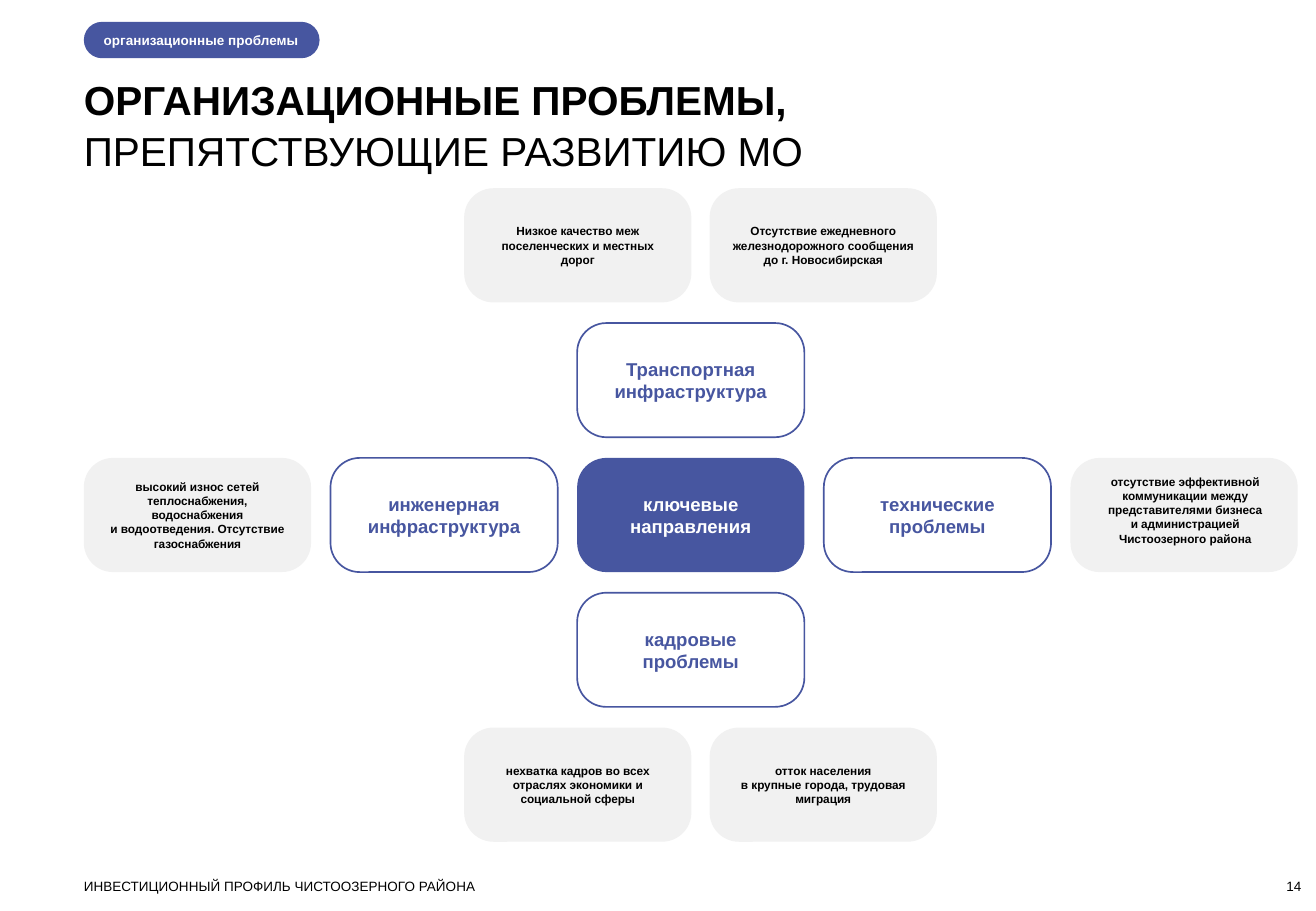
from pptx import Presentation
from pptx.dml.color import RGBColor
from pptx.enum.shapes import MSO_SHAPE
from pptx.enum.text import MSO_ANCHOR, MSO_AUTO_SIZE, PP_ALIGN
from pptx.util import Pt

ROUNDED = MSO_SHAPE.ROUNDED_RECTANGLE
TOP, MIDDLE, BOTTOM = MSO_ANCHOR.TOP, MSO_ANCHOR.MIDDLE, MSO_ANCHOR.BOTTOM
LEFT, CENTER, RIGHT = PP_ALIGN.LEFT, PP_ALIGN.CENTER, PP_ALIGN.RIGHT
NO_FIT = MSO_AUTO_SIZE.NONE
TITLE_ONLY = 5
EMU_PER_PX = 9144
FONT = "Arial"
COLORS = {"blue": "4756A0", "gray": "F1F1F1", "white": "FFFFFF", "black": "000000"}
CARD_W, CARD_H = 187, 94
STEP_X, STEP_Y = 203, 111
CENTER_X, CENTER_Y = 475, 377
CARD_STYLES = {
    "hub": ("blue", None, "white", 11),
    "area": (None, "blue", "blue", 11),
    "note": ("gray", None, "black", 7),
}
SIDE_SHIFT = CARD_W / 2 / STEP_X
PAIR_LEFT, PAIR_RIGHT = -SIDE_SHIFT, 1 - SIDE_SHIFT

CARDS = [
    ("hub", 0, 0, "ключевые направления"),
    ("area", 0, -1, "Транспортная инфраструктура"),
    ("area", -1, 0, "инженерная инфраструктура"),
    ("area", 1, 0, "технические проблемы"),
    ("area", 0, 1, "кадровые проблемы"),
    ("note", PAIR_LEFT, -2, "Низкое качество меж поселенческих и местных дорог"),
    ("note", PAIR_RIGHT, -2,
     "Отсутствие ежедневного железнодорожного сообщения до г. Новосибирская"),
    ("note", -2, 0, "высокий износ сетей теплоснабжения, водоснабжения\n"
     "и водоотведения. Отсутствие газоснабжения"),
    ("note", PAIR_LEFT, 2,
     "нехватка кадров во всех отраслях экономики и социальной сферы"),
    ("note", PAIR_RIGHT, 2, "отток населения\nв крупные города, трудовая миграция"),
]
BUSINESS_NOTE = ("отсутствие эффективной\nкоммуникации между представителями бизнеса\v"
                 "и администрацией Чистоозерного района")


def px(n):
    return round(n) * EMU_PER_PX


class Deck:
    """Holds the slide style and draws each kind of element on the current slide."""

    def __init__(self, width, height):
        self.prs = Presentation()
        self.prs.slide_width, self.prs.slide_height = px(width), px(height)
        self.s = self.prs.slides.add_slide(self.prs.slide_layouts[TITLE_ONLY])

    def color(self, name):
        return RGBColor.from_string(COLORS[name])

    def set_text(self, tf, text, size, color, bold=False, align=LEFT, anchor=TOP,
                 insets=(0, 0, 0, 0)):
        tf.text = text
        tf.word_wrap = True
        tf.auto_size = NO_FIT
        tf.vertical_anchor = anchor
        tf.margin_left, tf.margin_top, tf.margin_right, tf.margin_bottom = map(px, insets)
        for p in tf.paragraphs:
            p.alignment = align
            p.font.name = FONT
            p.font.size = Pt(size)
            p.font.bold = bold
            p.font.color.rgb = self.color(color)

    def title(self, x, y, w, h, text):
        sp = self.s.shapes.title
        sp.left, sp.top, sp.width, sp.height = map(px, (x, y, w, h))
        self.set_text(sp.text_frame, text, 24, "black")
        for p in sp.text_frame.paragraphs:
            p.line_spacing = 1.05
        sp.text_frame.paragraphs[0].font.bold = True

    def text(self, x, y, w, h, text, **style):
        sp = self.s.shapes.add_textbox(*map(px, (x, y, w, h)))
        self.set_text(sp.text_frame, text, 8, "black", **style)

    def box(self, x, y, w, h, radius, fill, line):
        sp = self.s.shapes.add_shape(ROUNDED, *map(px, (x, y, w, h)))
        sp.adjustments[0] = radius
        sp.shadow.inherit = False
        if fill:
            sp.fill.solid()
            sp.fill.fore_color.rgb = self.color(fill)
        else:
            sp.fill.background()
        if line:
            sp.line.color.rgb = self.color(line)
            sp.line.width = Pt(1)
        else:
            sp.line.fill.background()
        return sp.text_frame

    def tag(self, x, y, w, h, text):
        tf = self.box(x, y, w, h, 0.5, "blue", None)
        self.set_text(tf, text, 8, "white", True, LEFT, MIDDLE, (12, 0, 0, 0))

    def card(self, kind, col, row, text, insets=(10, 5, 10, 5)):
        fill, line, color, size = CARD_STYLES[kind]
        tf = self.box(CENTER_X + col * STEP_X, CENTER_Y + row * STEP_Y,
                      CARD_W, CARD_H, 0.256, fill, line)
        self.set_text(tf, text, size, color, True, CENTER, MIDDLE, insets)


def main():
    deck = Deck(1083, 750)
    deck.title(69, 60, 1002, 81, "ОРГАНИЗАЦИОННЫЕ ПРОБЛЕМЫ,\nПРЕПЯТСТВУЮЩИЕ РАЗВИТИЮ МО")
    deck.tag(69, 18, 194, 30, "организационные проблемы")
    for card in CARDS:
        deck.card(*card)
    deck.card("note", 2, 0, BUSINESS_NOTE, (10, 5, 8, 13))
    deck.text(69, 723, 800, 13, "ИНВЕСТИЦИОННЫЙ ПРОФИЛЬ ЧИСТООЗЕРНОГО РАЙОНА")
    deck.text(991, 723, 80, 13, "14", align=RIGHT, anchor=BOTTOM)
    deck.prs.save("out.pptx")


if __name__ == "__main__":
    main()
